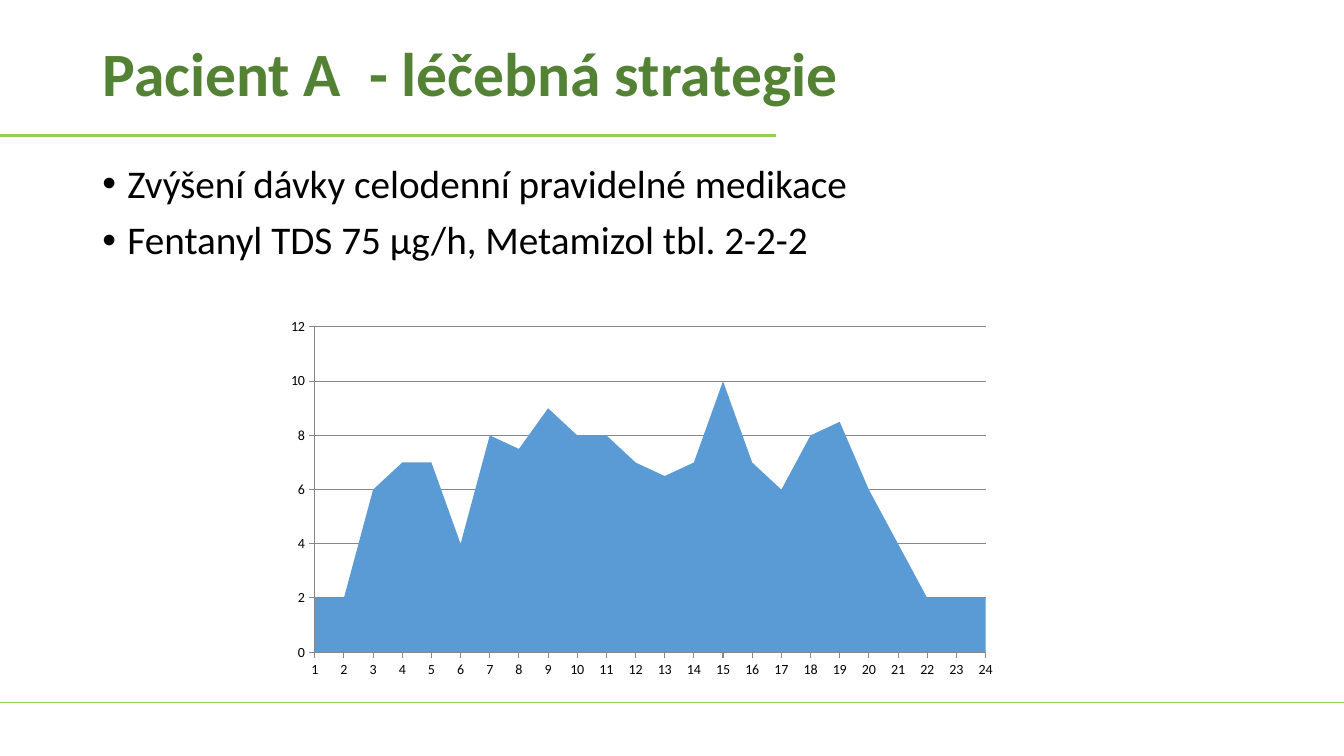
from lxml.etree import SubElement
from pptx import Presentation
from pptx.chart.data import CategoryChartData as ChartData
from pptx.dml.color import RGBColor
from pptx.enum.chart import XL_CHART_TYPE as ChartType, XL_TICK_MARK as Tick
from pptx.enum.shapes import MSO_CONNECTOR as Connector
from pptx.enum.text import MSO_ANCHOR as Anchor, MSO_AUTO_SIZE as AutoSize, PP_ALIGN as Align
from pptx.oxml.ns import qn
from pptx.util import Inches, Pt

COLUMNS, ROWS = 160, 90
UNIT = Inches(1 / 12)


def paint(target, color):
    target.rgb = RGBColor.from_string(color)


def write(paragraph, text, size=28, color="000000", bold=False, font="Calibri", before=0, bullet=None):
    paragraph.alignment = Align.LEFT
    paragraph.line_spacing = 0.9
    paragraph.space_before = Pt(before)
    run = paragraph.add_run()
    run.text = text
    run.font.name, run.font.size, run.font.bold = font, Pt(size), bold
    paint(run.font.color, color)
    if bullet:
        properties = paragraph._p.get_or_add_pPr()
        properties.set("marL", str(Inches(0.25)))
        properties.set("indent", str(-Inches(0.25)))
        SubElement(properties, qn("a:buFont")).set("typeface", "Arial")
        SubElement(properties, qn("a:buChar")).set("char", bullet)


class StrategySlide:
    heading_color = "548235"
    rule_color = "92D050"
    area_color = "5B9BD5"
    axis_color = "878787"

    def __init__(self, deck):
        self.slide = deck.slides.add_slide(deck.slide_layouts[5])

    def grid(self, *cells):
        return [round(cell * UNIT) for cell in cells]

    def title(self, text, *cells):
        heading = self.slide.shapes.title
        heading.left, heading.top, heading.width, heading.height = self.grid(*cells)
        frame = heading.text_frame
        frame.auto_size = AutoSize.NONE
        frame.vertical_anchor = Anchor.MIDDLE
        write(frame.paragraphs[0], text, size=44, color=self.heading_color, bold=True)

    def bullets(self, lines, *cells):
        frame = self.slide.shapes.add_textbox(*self.grid(*cells)).text_frame
        frame.word_wrap = True
        for index, line in enumerate(lines):
            paragraph = frame.add_paragraph() if index else frame.paragraphs[0]
            write(paragraph, line, before=10, bullet="•")

    def rule(self, row, length, weight):
        left, top, right = self.grid(0, row, length)
        rule = self.slide.shapes.add_connector(Connector.STRAIGHT, left, top, right, top)
        paint(rule.line.fill_color if hasattr(rule.line, "fill_color") else rule.line.color, self.rule_color)
        rule.line.width = Pt(weight)
        SubElement(rule._element.spPr, qn("a:effectLst"))

    def area_chart(self, values, *cells):
        pain = ChartData()
        pain.categories = [str(hour) for hour in range(1, len(values) + 1)]
        pain.add_series("Series 1", values)
        chart = self.slide.shapes.add_chart(ChartType.AREA, *self.grid(*cells), pain).chart
        chart.has_title = chart.has_legend = False
        chart.font.name, chart.font.size = "Calibri", Pt(10)
        paint(chart.font.color, "000000")
        chart.plots[0].vary_by_categories = False
        area = chart.plots[0].series[0].format.fill
        area.solid()
        paint(area.fore_color, self.area_color)

        hours, intensity = chart.category_axis, chart.value_axis
        hours.has_major_gridlines = False
        intensity.has_major_gridlines = True
        intensity.minimum_scale, intensity.maximum_scale, intensity.major_unit = 0, 12, 2
        intensity._element.find(qn("c:crossBetween")).set("val", "midCat")
        for axis in (hours, intensity):
            axis.major_tick_mark, axis.minor_tick_mark = Tick.OUTSIDE, Tick.NONE
        for part in (hours, intensity, intensity.major_gridlines):
            paint(part.format.line.color, self.axis_color)
            part.format.line.width = Pt(0.75)


def main():
    deck = Presentation()
    deck.slide_width, deck.slide_height = COLUMNS * UNIT, ROWS * UNIT
    strategy = StrategySlide(deck)
    strategy.title("Pacient A  - léčebná strategie", 11, 3.25, 138, 11.75)
    strategy.bullets(
        ["Zvýšení dávky celodenní pravidelné medikace", "Fentanyl TDS 75 μg/h, Metamizol tbl. 2-2-2"],
        11, 19, 138, 62.2,
    )
    strategy.rule(83.6, COLUMNS, 1)
    strategy.rule(16.1, 92.4, 2)
    pain_by_hour = [2, 2, 6, 7, 7, 4, 8, 7.5, 9, 8, 8, 7, 6.5, 7, 10, 7, 6, 8, 8.5, 6, 4, 2, 2, 2]
    strategy.area_chart(pain_by_hour, 32.9, 37.1, 87, 44.5)
    deck.save("out.pptx")


if __name__ == "__main__":
    main()
